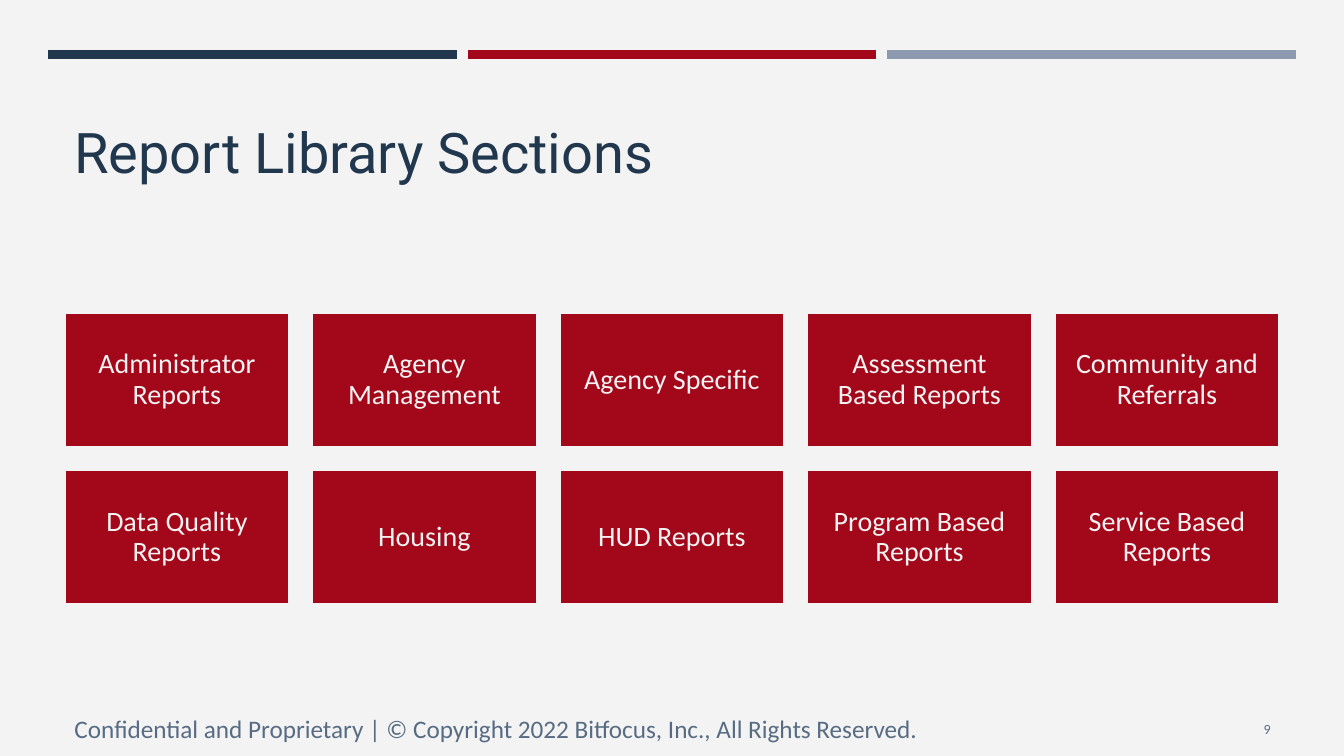
from lxml import etree
from pptx import Presentation
from pptx.dml.color import RGBColor
from pptx.enum.shapes import MSO_CONNECTOR, MSO_SHAPE
from pptx.enum.text import MSO_ANCHOR, PP_ALIGN
from pptx.oxml.ns import qn
from pptx.util import Inches, Pt

STRAIGHT = MSO_CONNECTOR.STRAIGHT
RECTANGLE = MSO_SHAPE.RECTANGLE
LEFT, CENTER, RIGHT = PP_ALIGN.LEFT, PP_ALIGN.CENTER, PP_ALIGN.RIGHT
MIDDLE, BOTTOM = MSO_ANCHOR.MIDDLE, MSO_ANCHOR.BOTTOM

PAPER = RGBColor(0xF4, 0xF3, 0xF3)
NAVY = RGBColor(0x20, 0x37, 0x4E)
RED = RGBColor(0xA3, 0x07, 0x1A)
MIST = RGBColor(0x8D, 0x99, 0xAF)
SLATE = RGBColor(0x57, 0x6C, 0x83)

MARGIN = 0.64
SECTIONS = [
    ["Administrator Reports", "Agency Management", "Agency Specific",
     "Assessment Based Reports", "Community and Referrals"],
    ["Data Quality Reports", "Housing", "HUD Reports",
     "Program Based Reports", "Service Based Reports"],
]


class SlideBuilder:
    """Holds the slide and its style, with one method per kind of element."""

    body_font = "Calibri"
    title_font = "Roboto"

    def __init__(self, slide):
        self.slide = slide
        background = slide.background.fill
        background.solid()
        background.fore_color.rgb = PAPER

    def set_text(self, shape, text, size, color, font=None, align=LEFT,
                 anchor=MIDDLE, inset=None, spacing=None):
        frame = shape.text_frame
        frame_format = {"word_wrap": True, "vertical_anchor": anchor}
        if inset is not None:
            for side in ("left", "top", "right", "bottom"):
                frame_format["margin_" + side] = Inches(inset)
        for name, value in frame_format.items():
            setattr(frame, name, value)
        paragraph = frame.paragraphs[0]
        paragraph.text = text
        paragraph.alignment = align
        paragraph.line_spacing = spacing
        font_format = {"name": font or self.body_font, "size": Pt(size)}
        for name, value in font_format.items():
            setattr(paragraph.font, name, value)
        paragraph.font.color.rgb = color

    def text(self, left, top, width, height, text, size, color, **style):
        box = self.slide.shapes.add_textbox(
            Inches(left), Inches(top), Inches(width), Inches(height))
        self.set_text(box, text, size, color, **style)

    def stripe(self, left, top, length, color):
        stripe = self.slide.shapes.add_connector(
            STRAIGHT, Inches(left), Inches(top),
            Inches(left + length), Inches(top))
        stripe.line.color.rgb = color
        stripe.line.width = Pt(6.5)
        etree.SubElement(stripe._element.spPr, qn("a:effectLst"))

    def tile(self, left, top, width, height, label):
        tile = self.slide.shapes.add_shape(
            RECTANGLE, Inches(left), Inches(top),
            Inches(width), Inches(height))
        tile.shadow.inherit = False
        tile.fill.solid()
        tile.fill.fore_color.rgb = RED
        tile.line.color.rgb = PAPER
        tile.line.width = Pt(1.75)
        self.set_text(tile, label, 20, PAPER, align=CENTER, inset=0.08,
                      spacing=0.9)


def main():
    deck = Presentation()
    deck.slide_width, deck.slide_height = Inches(13.33), Inches(7.5)
    builder = SlideBuilder(deck.slides.add_slide(deck.slide_layouts[6]))

    # Header stripes
    for index, color in enumerate((NAVY, RED, MIST)):
        builder.stripe(0.48 + index * 4.16, 0.54, 4.05, color)

    # Title
    builder.text(MARGIN, 0.8, 12.06, 1.08, "Report Library Sections", 40,
                 NAVY, font=builder.title_font, anchor=BOTTOM)

    # Grid of report sections
    last_tile_left = 10.46
    for row, labels in enumerate(SECTIONS):
        pitch = (last_tile_left - MARGIN) / (len(labels) - 1)
        for column, label in enumerate(labels):
            builder.tile(MARGIN + column * pitch, 3.1 + row * 1.56,
                         2.23, 1.34, label)

    # Footer and page number
    builder.text(MARGIN, 7.03, 8.85, 0.4,
                 "Confidential and Proprietary | © Copyright 2022 "
                 "Bitfocus, Inc., All Rights Reserved.", 18, SLATE)
    builder.text(11.55, 7.03, 1.15, 0.4, "9", 10, SLATE, align=RIGHT)

    deck.save("out.pptx")


if __name__ == "__main__":
    main()
